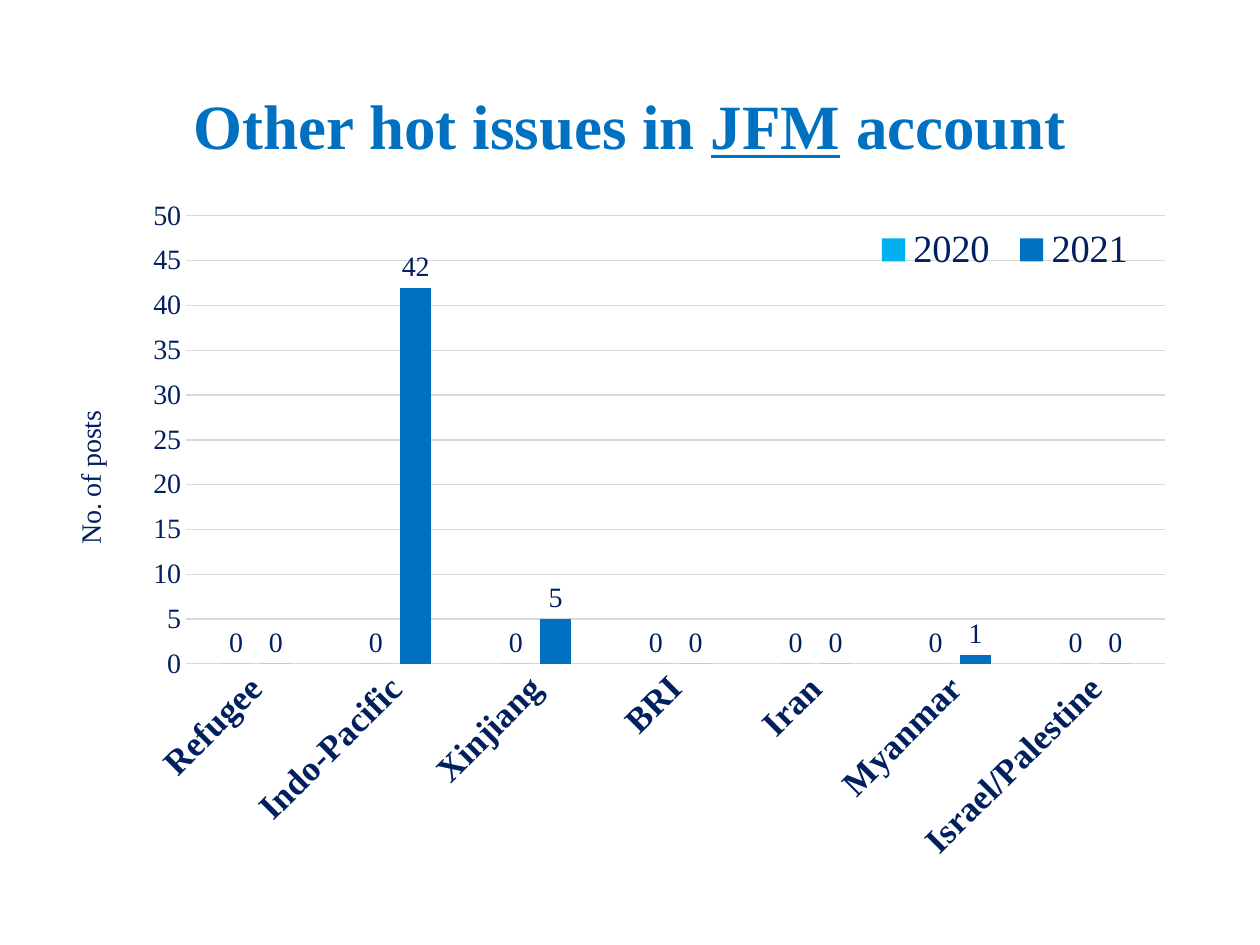
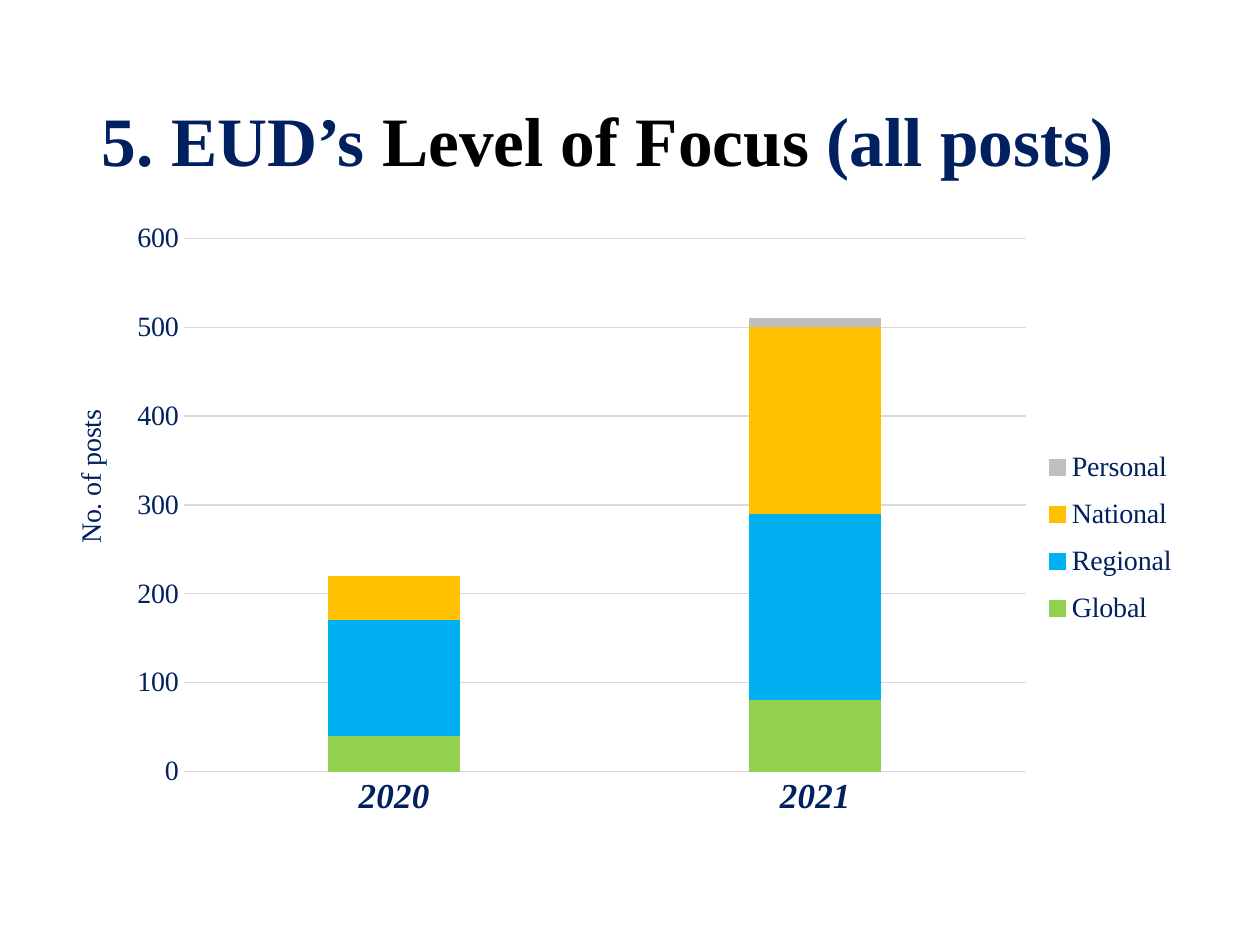
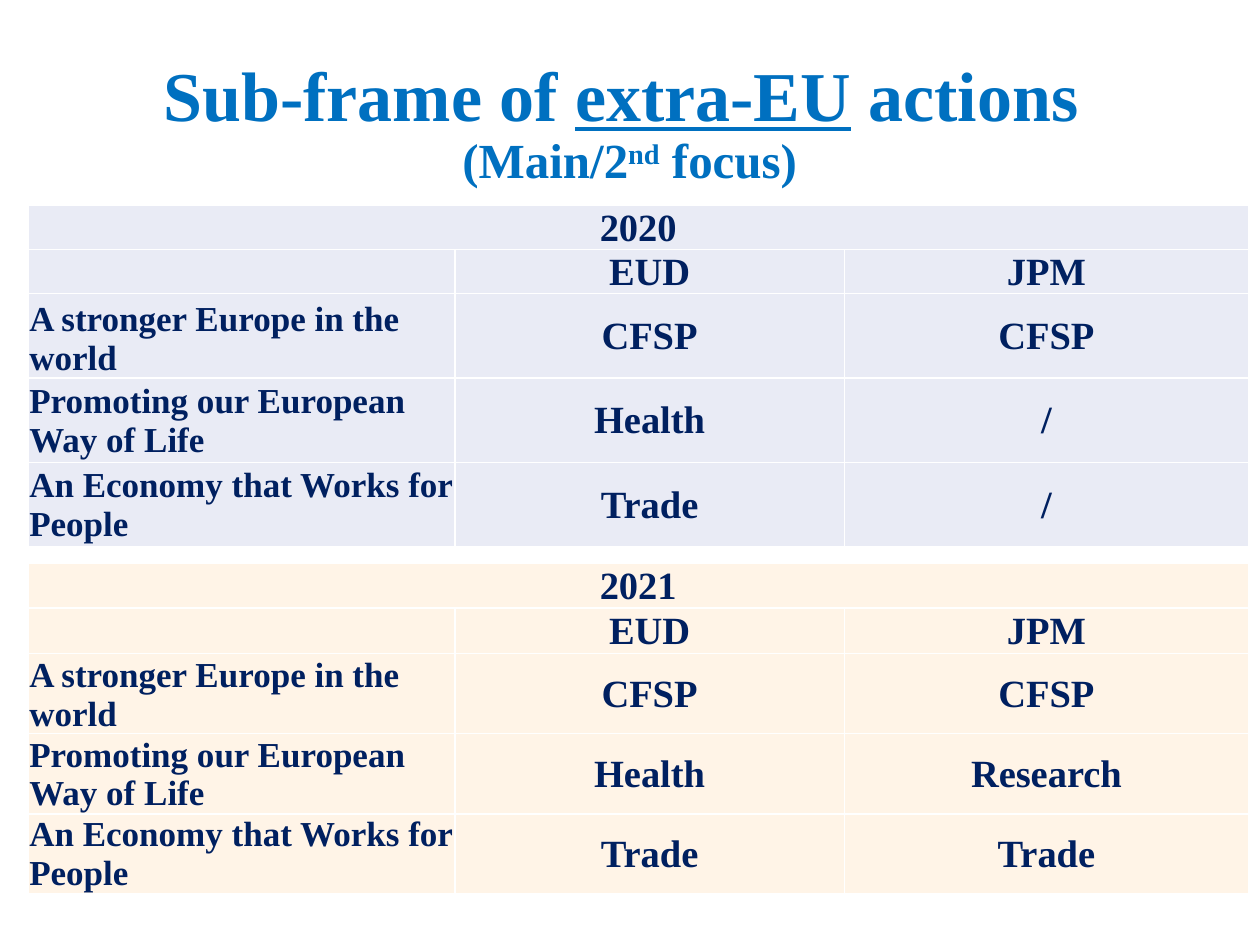
from lxml import etree
from pptx import Presentation
from pptx.chart.data import CategoryChartData
from pptx.dml.color import RGBColor
from pptx.enum.chart import XL_CHART_TYPE, XL_LABEL_POSITION, XL_LEGEND_POSITION, XL_TICK_MARK
from pptx.enum.text import MSO_ANCHOR, MSO_AUTO_SIZE, PP_ALIGN
from pptx.oxml import parse_xml
from pptx.oxml.ns import nsdecls, qn
from pptx.util import Cm, Pt

CLUSTERED = XL_CHART_TYPE.COLUMN_CLUSTERED
STACKED = XL_CHART_TYPE.COLUMN_STACKED
LEGEND_TOP = XL_LEGEND_POSITION.TOP
LEGEND_RIGHT = XL_LEGEND_POSITION.RIGHT
OUTSIDE_END = XL_LABEL_POSITION.OUTSIDE_END
NO_TICK = XL_TICK_MARK.NONE
CENTER = PP_ALIGN.CENTER
LEFT = PP_ALIGN.LEFT
MIDDLE = MSO_ANCHOR.MIDDLE
BOTTOM = MSO_ANCHOR.BOTTOM
NO_AUTOFIT = MSO_AUTO_SIZE.NONE

FONT = "Times New Roman"
COLORS = {
    "navy": "002060",
    "blue": "0070C0",
    "sky": "00B0F0",
    "green": "92D050",
    "amber": "FFC000",
    "silver": "BFBFBF",
    "grid": "D9D9D9",
    "black": "000000",
    "white": "FFFFFF",
    "lavender": "E9EBF5",
    "cream": "FFF4E7",
}
TITLE_ONLY = 5
COLUMN_WIDTHS = [8.61, 7.85, 8.15]


def color(name):
    return RGBColor.from_string(COLORS[name])


def style_font(font, size, name="navy", bold=False):
    font.name = FONT
    font.size = Pt(size)
    font.bold = bold
    font.color.rgb = color(name)


def add_title(slide, box, size, base_color, pieces):
    """Fill the title placeholder; each piece is a text and its own formatting."""
    title = slide.shapes.title
    title.left, title.top, title.width, title.height = map(Cm, box)
    frame = title.text_frame
    frame.auto_size = NO_AUTOFIT
    frame.word_wrap = True
    frame.vertical_anchor = MIDDLE
    paragraph = frame.paragraphs[0]
    paragraph.alignment = CENTER
    paragraph.line_spacing = 0.9
    style_font(paragraph.font, size, base_color, bold=True)
    for text, look in pieces:
        if text == "\n":
            paragraph.add_line_break()
            continue
        run = paragraph.add_run()
        run.text = text
        if "color" in look:
            run.font.color.rgb = color(look["color"])
        if "size" in look:
            run.font.size = Pt(look["size"])
        if look.get("underline"):
            run.font.underline = True
        if look.get("raised"):
            run.font._element.set("baseline", "30000")


def set_layout(element, place, inner=False):
    """Fix a chart part at fractions of the chart: x, y and optionally w, h."""
    for old in element.findall(qn("c:layout")):
        element.remove(old)
    layout = parse_xml(f"<c:layout {nsdecls('c')}><c:manualLayout/></c:layout>")
    settings = [("layoutTarget", "inner")] if inner else []
    settings += [("xMode", "edge"), ("yMode", "edge"), *zip("xywh", place)]
    for tag, value in settings:
        etree.SubElement(layout[0], qn(f"c:{tag}")).set("val", str(value))
    overlay = element.find(qn("c:overlay"))
    if overlay is None:
        element.insert(0, layout)
    else:
        overlay.addprevious(layout)


def add_column_chart(slide, box, kind, categories, series, overlap, scale,
                     plot_place, legend_position, legend_size, legend_place):
    data = CategoryChartData()
    data.categories = categories
    for name, values, _ in series:
        data.add_series(name, values)
    chart = slide.shapes.add_chart(kind, *map(Cm, box), data).chart
    chart.has_title = False
    style_font(chart.font, 16)

    # Columns
    plot = chart.plots[0]
    plot.gap_width = 219
    plot.overlap = overlap
    plot.vary_by_categories = False
    for column, (_, _, fill) in zip(plot.series, series):
        column.format.fill.solid()
        column.format.fill.fore_color.rgb = color(fill)
        column.invert_if_negative = False

    # Axes
    category_axis, value_axis = chart.category_axis, chart.value_axis
    for axis in (category_axis, value_axis):
        axis.major_tick_mark = axis.minor_tick_mark = NO_TICK
    style_font(category_axis.tick_labels.font, 20, bold=True)
    style_font(value_axis.tick_labels.font, 16)
    value_axis.minimum_scale = 0
    value_axis.maximum_scale, value_axis.major_unit = scale
    value_axis.has_major_gridlines = True
    for line in (category_axis.format.line, value_axis.major_gridlines.format.line):
        line.color.rgb = color("grid")
        line.width = Pt(0.75)
    value_axis.format.line.fill.background()
    title_frame = value_axis.axis_title.text_frame
    title_frame.text = "No. of posts"
    style_font(title_frame.paragraphs[0].font, 16)
    turn_text(chart, "c:valAx/c:title//a:bodyPr", -90)

    # Legend
    chart.has_legend = True
    chart.legend.position = legend_position
    chart.legend.include_in_layout = False
    style_font(chart.legend.font, legend_size)

    # Positions
    for query, place in (("//c:plotArea", plot_place),
                         ("//c:valAx/c:title", (0.02, 0.32)),
                         ("//c:legend", legend_place)):
        set_layout(chart.element.xpath(query)[0], place, inner=query == "//c:plotArea")
    return chart


def turn_text(chart, query, degrees):
    body = chart.element.xpath(f"//{query}")[0]
    body.set("rot", str(degrees * 60000))
    body.set("vert", "horz")


def add_borders(cell):
    properties = cell._tc.get_or_add_tcPr()
    for side in ("lnL", "lnR", "lnT", "lnB"):
        properties.append(parse_xml(
            f'<a:{side} {nsdecls("a")} w="{Pt(1)}"><a:solidFill>'
            f'<a:srgbClr val="{COLORS["white"]}"/></a:solidFill></a:{side}>'))


def add_year_table(slide, left, top, row_heights, year, fill, topics):
    rows = [(year, "", ""), ("", "EUD", "JPM"), *topics]
    table = slide.shapes.add_table(
        len(rows), len(COLUMN_WIDTHS), Cm(left), Cm(top),
        Cm(sum(COLUMN_WIDTHS)), Cm(sum(row_heights))).table
    table.first_row = table.horz_banding = False
    for column, width in zip(table.columns, COLUMN_WIDTHS):
        column.width = Cm(width)
    for row, height in zip(table.rows, row_heights):
        row.height = Cm(height)
    table.cell(0, 0).merge(table.cell(0, 2))
    for row_index, texts in enumerate(rows):
        for column_index, text in enumerate(texts):
            cell = table.cell(row_index, column_index)
            add_borders(cell)
            cell.fill.solid()
            cell.fill.fore_color.rgb = color(fill)
            cell.margin_left = cell.margin_right = cell.margin_top = Cm(0.03)
            cell.margin_bottom = 0
            is_topic = column_index == 0 and row_index > 1
            cell.vertical_anchor = BOTTOM if is_topic and row_index == 2 else MIDDLE
            paragraph = cell.text_frame.paragraphs[0]
            if text:
                paragraph.text = text
            paragraph.alignment = LEFT if is_topic else CENTER
            style_font(paragraph.font, 20 if is_topic else 22, bold=True)


def build_hot_issues(slide):
    add_title(slide, (1.75, 1.6, 21.9, 2.01), 36, "blue", [
        ("Other hot issues in ", {}), ("JFM", {"underline": True}), (" account", {})])
    chart = add_column_chart(
        slide, (0.89, 3.61, 23.62, 14.27), CLUSTERED,
        ["Refugee", "Indo-Pacific", "Xinjiang", "BRI", "Iran", "Myanmar", "Israel/Palestine"],
        [("2020", [0, 0, 0, 0, 0, 0, 0], "sky"),
         ("2021", [0, 42, 5, 0, 0, 1, 0], "blue")],
        overlap=-27, scale=(50, 5), plot_place=(0.121, 0.052, 0.836, 0.633),
        legend_position=LEGEND_TOP, legend_size=22, legend_place=(0.7, 0.06, 0.24, 0.08))
    turn_text(chart, "c:catAx/c:txPr/a:bodyPr", -45)
    for column in chart.plots[0].series:
        labels = column.data_labels
        labels.show_value = True
        labels.position = OUTSIDE_END
        style_font(labels.font, 16)


def build_level_of_focus(slide):
    add_title(slide, (1.3, 1.78, 21.9, 2.26), 39.6, "navy", [
        ("5. EUD’s ", {}), ("Level of Focus", {"color": "black"}), (" (all posts)", {})])
    chart = add_column_chart(
        slide, (0.89, 3.63, 23.62, 14.15), STACKED, ["2020", "2021"],
        [("Global", [40, 80], "green"),
         ("Regional", [130, 210], "sky"),
         ("National", [50, 210], "amber"),
         ("Personal", [0, 10], "silver")],
        overlap=100, scale=(600, 100), plot_place=(0.119, 0.083, 0.719, 0.76),
        legend_position=LEGEND_RIGHT, legend_size=16, legend_place=(0.845, 0.365, 0.13, 0.29))
    chart.category_axis.tick_labels.font.italic = True


def build_sub_frames(slide):
    small = {"size": 28}
    add_title(slide, (0.81, 0.91, 23.77, 3.23), 40, "blue", [
        ("Sub-frame of ", {}), ("extra-EU", {"underline": True}), (" actions ", {}),
        ("\n", {}),
        ("(Main/2", small), ("nd", {"size": 28, "raised": True}), (" focus)", small)])
    topics = ["A stronger Europe in the world",
              "Promoting our European Way of Life",
              "An Economy that Works for People"]
    delegation = ["CFSP", "Health", "Trade"]
    add_year_table(slide, 0.56, 4.14, [0.86, 0.86, 1.7, 1.7, 1.7], "2020", "lavender",
                   zip(topics, delegation, ["CFSP", "/", "/"]))
    add_year_table(slide, 0.56, 11.35, [0.91, 0.91, 1.62, 1.62, 1.6], "2021", "cream",
                   zip(topics, delegation, ["CFSP", "Research", "Trade"]))


def main():
    presentation = Presentation()
    presentation.slide_width, presentation.slide_height = Cm(25.4), Cm(19.05)
    for build in (build_hot_issues, build_level_of_focus, build_sub_frames):
        build(presentation.slides.add_slide(presentation.slide_layouts[TITLE_ONLY]))
    presentation.save("out.pptx")


if __name__ == "__main__":
    main()
